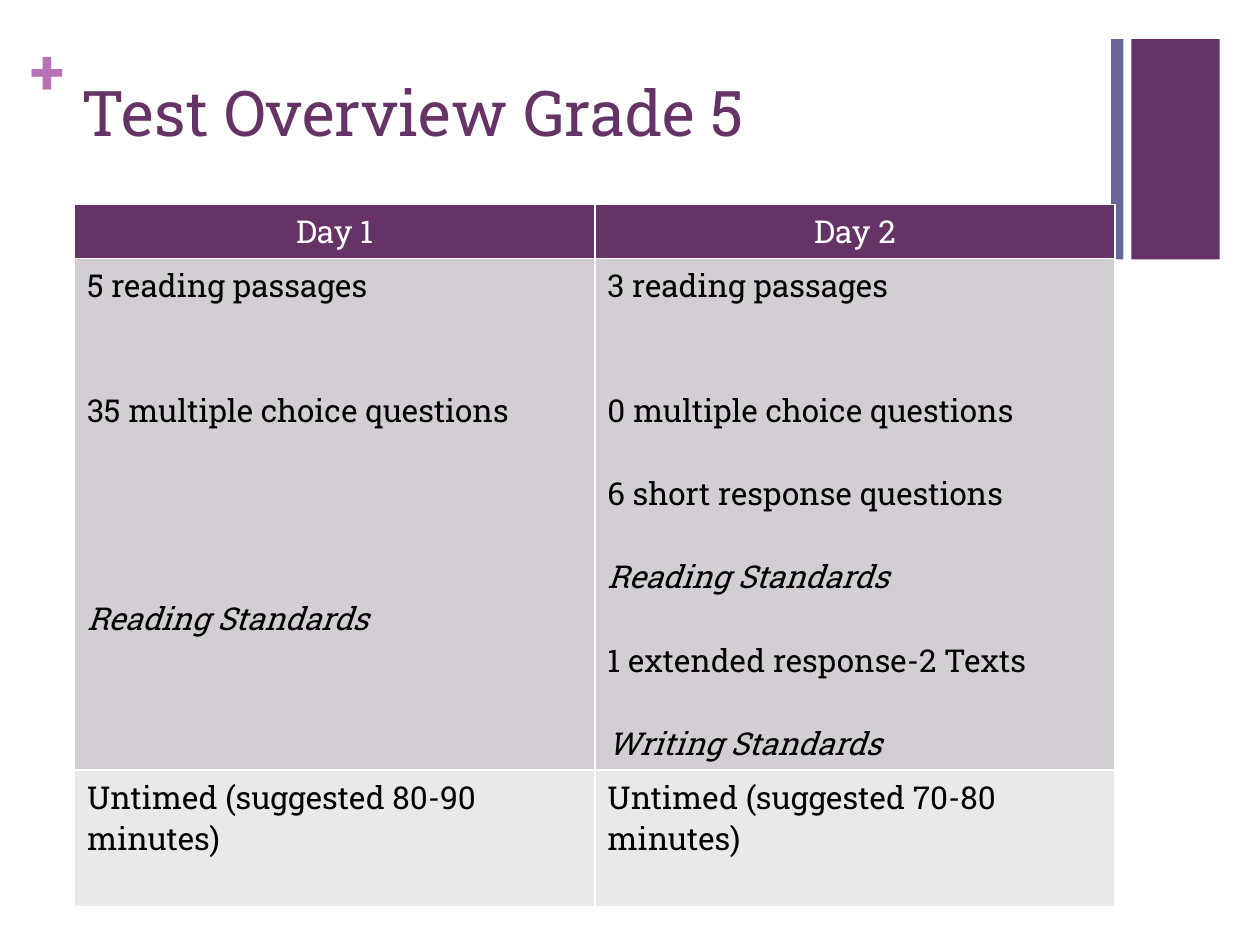
from dataclasses import dataclass

from lxml.etree import SubElement
from pptx import Presentation
from pptx.dml.color import RGBColor
from pptx.enum.shapes import MSO_SHAPE
from pptx.enum.text import MSO_ANCHOR, PP_ALIGN
from pptx.oxml.ns import qn
from pptx.util import Cm, Pt


@dataclass(frozen=True)
class Theme:
    font: str = "Roboto Slab"
    plum: str = "663366"
    slate: str = "666699"
    orchid: str = "B870B8"
    white: str = "FFFFFF"
    black: str = "000000"
    band_dark: str = "D3CED3"
    band_light: str = "EAE8EA"
    title_size: float = 36
    body_size: float = 18
    line_pitch: float = 23.75
    border: float = 1


@dataclass(frozen=True)
class Box:
    left: float
    top: float
    width: float
    height: float

    def lengths(self) -> tuple:
        return tuple(Cm(v) for v in (self.left, self.top, self.width, self.height))


@dataclass(frozen=True)
class Bar:
    box: Box
    color: str


@dataclass(frozen=True)
class Label:
    box: Box
    text: str
    color: str
    inset: tuple
    bold: bool = False


@dataclass(frozen=True)
class Line:
    text: str
    gap: int = 0
    italic: bool = False


@dataclass(frozen=True)
class Row:
    height: float
    fill: str
    color: str
    align: PP_ALIGN
    cells: tuple


T = Theme()
SIDE_BAR = Bar(Box(22.81, 0.79, 1.78, 4.44), T.plum)
SIDE_STRIPE = Bar(Box(22.4, 0.79, 0.25, 4.44), T.slate)
PLUS = Label(Box(0.61, 0.64, 0.74, 1.55), "+", T.orchid, (0, 0), True)
TITLE = Label(Box(1.4, 1.35, 20.98, 2.21), "Test Overview Grade 5", T.plum, (0.25, 0.13))
TABLE_LEFT, TABLE_TOP, COL_WIDTH = 1.5, 4.12, 10.49

ROWS = (
    Row(1.09, T.plum, T.white, PP_ALIGN.CENTER, ((Line("Day 1"),), (Line("Day 2"),))),
    Row(10.31, T.band_dark, T.black, PP_ALIGN.LEFT, (
        (
            Line("5 reading passages"),
            Line("35 multiple choice questions", 2),
            Line("Reading Standards", 4, True),
        ),
        (
            Line("3 reading passages"),
            Line("0 multiple choice questions", 2),
            Line("6 short response questions", 1),
            Line("Reading Standards", 1, True),
            Line("1 extended response-2 Texts", 1),
            Line("Writing Standards", 1, True),
        ),
    )),
    Row(2.76, T.band_light, T.black, PP_ALIGN.LEFT, (
        (Line("Untimed (suggested 80-90 minutes)"),),
        (Line("Untimed (suggested 70-80 minutes)"),),
    )),
)


def add_run(p, text: str, color: str, formats: dict) -> None:
    r = p.add_run()
    r.text = text
    for name, value in {"name": T.font, **formats}.items():
        setattr(r.font, name, value)
    r.font.color.rgb = RGBColor.from_string(color)


def draw_bar(s, bar: Bar) -> None:
    sp = s.shapes.add_shape(MSO_SHAPE.RECTANGLE, *bar.box.lengths())
    sp.shadow.inherit = False
    sp.fill.solid()
    sp.fill.fore_color.rgb = RGBColor.from_string(bar.color)
    sp.line.fill.background()


def draw_label(s, label: Label) -> None:
    tf = s.shapes.add_textbox(*label.box.lengths()).text_frame
    side, end = (Cm(v) for v in label.inset)
    formats = {
        "word_wrap": True, "vertical_anchor": MSO_ANCHOR.TOP,
        "margin_left": side, "margin_right": side,
        "margin_top": end, "margin_bottom": end,
    }
    for name, value in formats.items():
        setattr(tf, name, value)
    add_run(tf.paragraphs[0], label.text, label.color,
            {"size": Pt(T.title_size), "bold": label.bold})


def set_borders(cell) -> None:
    tc_pr = cell._tc.get_or_add_tcPr()
    for i, tag in enumerate(("a:lnL", "a:lnR", "a:lnT", "a:lnB")):
        ln = SubElement(tc_pr, qn(tag), w=str(Pt(T.border)))
        SubElement(SubElement(ln, qn("a:solidFill")), qn("a:srgbClr"), val=T.white)
        tc_pr.insert(i, ln)


def fill_cell(cell, row: Row, lines: tuple) -> None:
    cell.fill.solid()
    cell.fill.fore_color.rgb = RGBColor.from_string(row.fill)
    set_borders(cell)
    tf = cell.text_frame
    for i, line in enumerate(lines):
        p = tf.add_paragraph() if i else tf.paragraphs[0]
        p.alignment = row.align
        p.space_before = Pt(line.gap * T.line_pitch)
        add_run(p, line.text, row.color,
                {"size": Pt(T.body_size), "bold": False, "italic": line.italic})


def draw_table(s) -> None:
    cols = len(ROWS[0].cells)
    box = Box(TABLE_LEFT, TABLE_TOP, cols * COL_WIDTH, sum(row.height for row in ROWS))
    table = s.shapes.add_table(len(ROWS), cols, *box.lengths()).table
    for col in table.columns:
        col.width = Cm(COL_WIDTH)
    for i, row in enumerate(ROWS):
        table.rows[i].height = Cm(row.height)
        for j, lines in enumerate(row.cells):
            fill_cell(table.cell(i, j), row, lines)


def main() -> None:
    prs = Presentation()
    prs.slide_width, prs.slide_height = Cm(25.4), Cm(19.05)
    s = prs.slides.add_slide(prs.slide_layouts[6])
    draw_bar(s, SIDE_BAR)
    draw_label(s, PLUS)
    draw_bar(s, SIDE_STRIPE)
    draw_label(s, TITLE)
    draw_table(s)
    prs.save("out.pptx")


if __name__ == "__main__":
    main()
